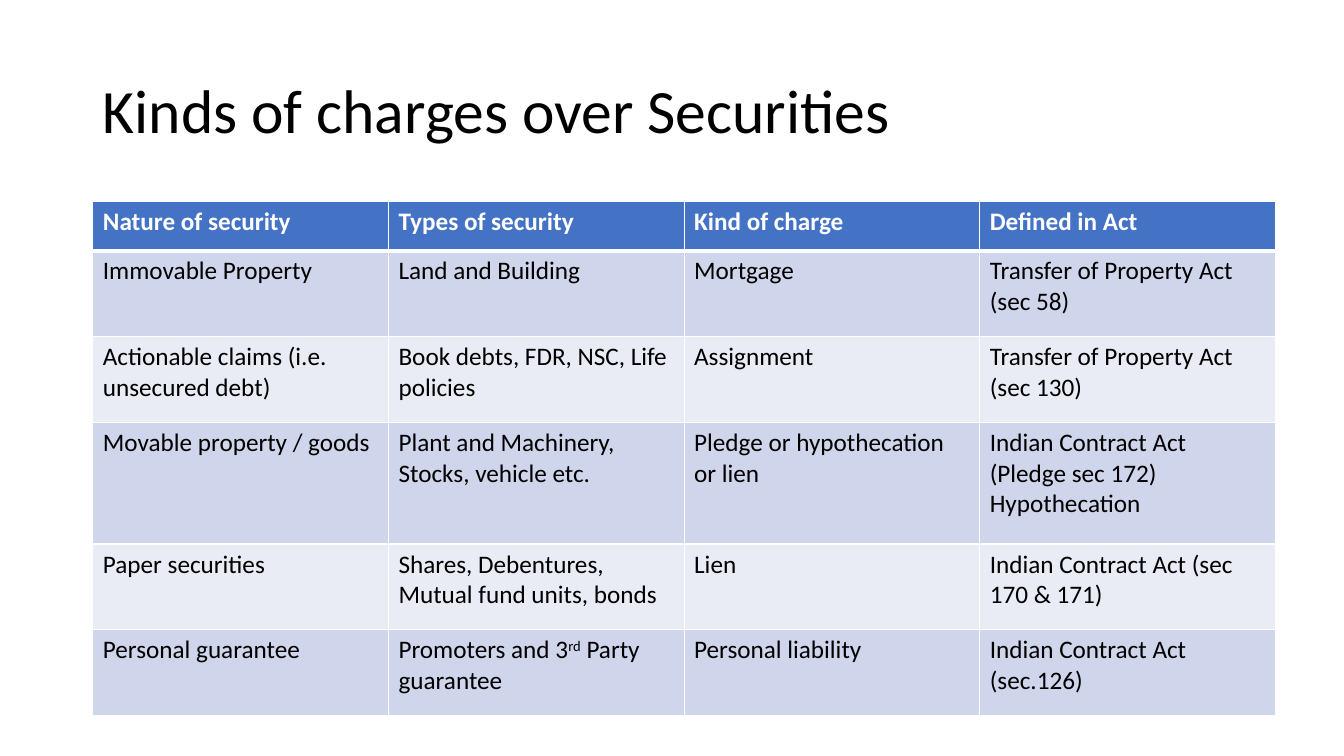
from dataclasses import dataclass

from lxml import etree
from pptx import Presentation
from pptx.dml.color import RGBColor
from pptx.enum import text as t
from pptx.oxml import ns
from pptx.slide import Slide
from pptx.table import Table, _Cell
from pptx.text.text import Font
from pptx.util import Cm, Pt

WHITE = RGBColor(0xFF, 0xFF, 0xFF)
BLACK = RGBColor(0x00, 0x00, 0x00)
HEADER_BLUE = RGBColor(0x44, 0x72, 0xC4)
BAND_DARK = RGBColor(0xCF, 0xD5, 0xEA)
BAND_LIGHT = RGBColor(0xE9, 0xEB, 0xF5)

FONT_NAME = "Calibri"
SUPERSCRIPT_MARK = "^"
LEFT = Cm(2.34)
COLUMN_WIDTH = Cm(7.45)
THIN, THICK = Pt(1), Pt(3)


@dataclass(frozen=True)
class Charge:
    nature: str
    types: str
    kind: str
    act: str
    height: float = 2.16

    def texts(self) -> tuple[str, ...]:
        return self.nature, self.types, self.kind, self.act


HEADINGS = Charge("Nature of security", "Types of security", "Kind of charge",
                  "Defined in Act", height=1.24)
CHARGES = [
    Charge("Immovable Property", "Land and Building", "Mortgage",
           "Transfer of Property Act (sec 58)"),
    Charge("Actionable claims (i.e. unsecured debt)",
           "Book debts, FDR, NSC, Life policies", "Assignment",
           "Transfer of Property Act (sec 130)"),
    Charge("Movable property / goods", "Plant and Machinery, Stocks, vehicle etc.",
           "Pledge or hypothecation or lien",
           "Indian Contract Act (Pledge sec 172) Hypothecation", height=3.07),
    Charge("Paper securities", "Shares, Debentures, Mutual fund units, bonds", "Lien",
           "Indian Contract Act (sec 170 & 171)"),
    Charge("Personal guarantee", "Promoters and 3^rd^ Party guarantee",
           "Personal liability", "Indian Contract Act (sec.126)"),
]


def style_font(font: Font, size: int, color: RGBColor, bold: bool = False) -> None:
    font.name = FONT_NAME
    font.size = Pt(size)
    font.bold = bold
    font.color.rgb = color


def add_title(slide: Slide, wording: str) -> None:
    title = slide.shapes.add_textbox(LEFT, Cm(1.02), Cm(29.21), Cm(3.68))
    frame = title.text_frame
    frame.word_wrap = True
    frame.vertical_anchor = t.MSO_ANCHOR.MIDDLE
    frame.text = wording
    paragraph = frame.paragraphs[0]
    paragraph.line_spacing = 0.9
    style_font(paragraph.runs[0].font, 44, BLACK)


def set_border(cell: _Cell, side: str, width: int) -> None:
    properties = cell._tc.get_or_add_tcPr()
    line = etree.SubElement(properties, ns.qn(f"a:ln{side}"), w=str(width))
    fill = etree.SubElement(line, ns.qn("a:solidFill"))
    etree.SubElement(fill, ns.qn("a:srgbClr"), val=str(WHITE))


def fill_cell(cell: _Cell, wording: str, row: int) -> None:
    is_header = row == 0
    set_border(cell, "L", THIN)
    set_border(cell, "R", THIN)
    set_border(cell, "T", THICK if row == 1 else THIN)
    set_border(cell, "B", THICK if is_header else THIN)
    cell.fill.solid()
    band = BAND_DARK if row % 2 else BAND_LIGHT
    cell.fill.fore_color.rgb = HEADER_BLUE if is_header else band

    first, *rest = wording.split(SUPERSCRIPT_MARK)
    paragraph = cell.text_frame.paragraphs[0]
    paragraph.text = first
    for part in rest:
        paragraph.add_run().text = part
    for index, run in enumerate(paragraph.runs):
        style_font(run.font, 18, WHITE if is_header else BLACK, is_header)
        if index % 2:
            run.font._element.set("baseline", "30000")


def add_charges_table(slide: Slide, rows: list[Charge]) -> Table:
    column_count = len(HEADINGS.texts())
    table = slide.shapes.add_table(
        len(rows), column_count, LEFT, Cm(5.08), COLUMN_WIDTH * column_count,
        Cm(sum(charge.height for charge in rows))).table
    table.horz_banding = False
    for column in table.columns:
        column.width = COLUMN_WIDTH
    for row, charge in enumerate(rows):
        table.rows[row].height = Cm(charge.height)
        for column, wording in enumerate(charge.texts()):
            fill_cell(table.cell(row, column), wording, row)
    return table


def main() -> None:
    presentation = Presentation()
    presentation.slide_width = Cm(33.87)
    presentation.slide_height = Cm(19.05)
    slide = presentation.slides.add_slide(presentation.slide_layouts[6])
    add_title(slide, "Kinds of charges over Securities")
    add_charges_table(slide, [HEADINGS, *CHARGES])
    presentation.save("out.pptx")


if __name__ == "__main__":
    main()
